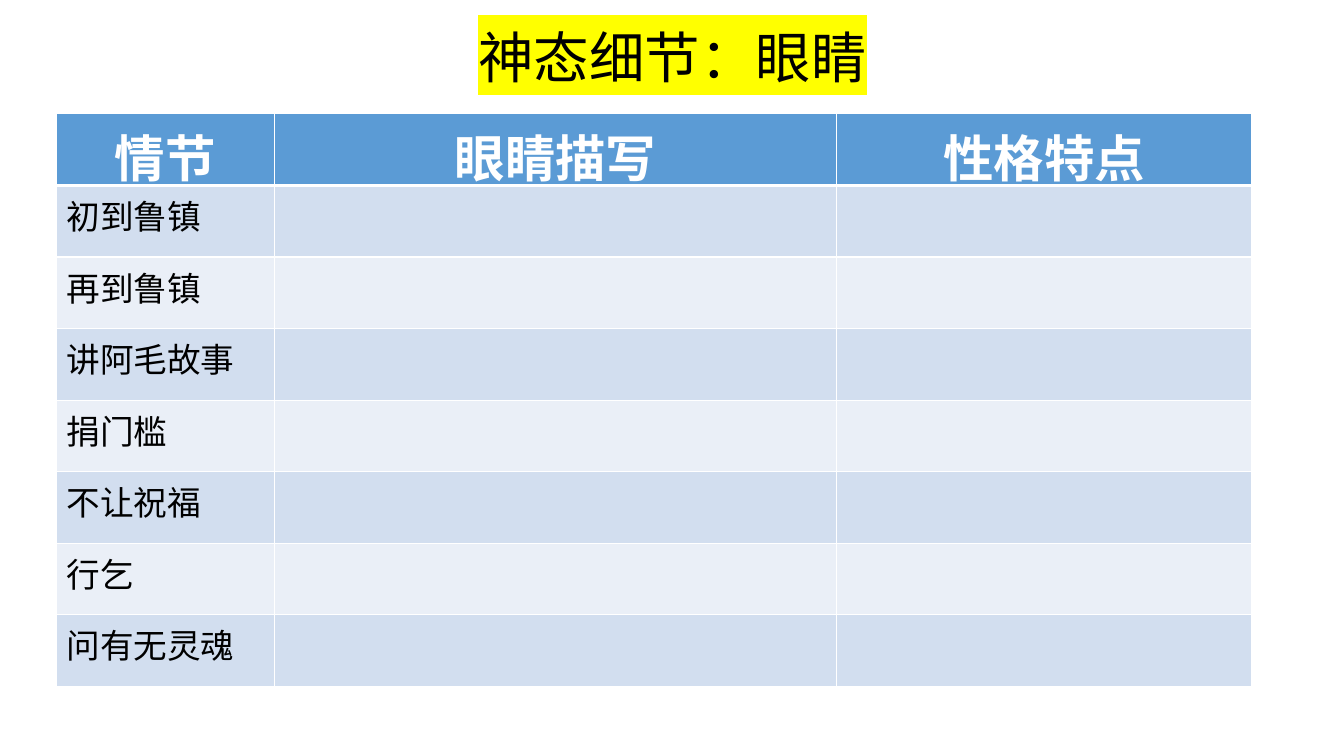
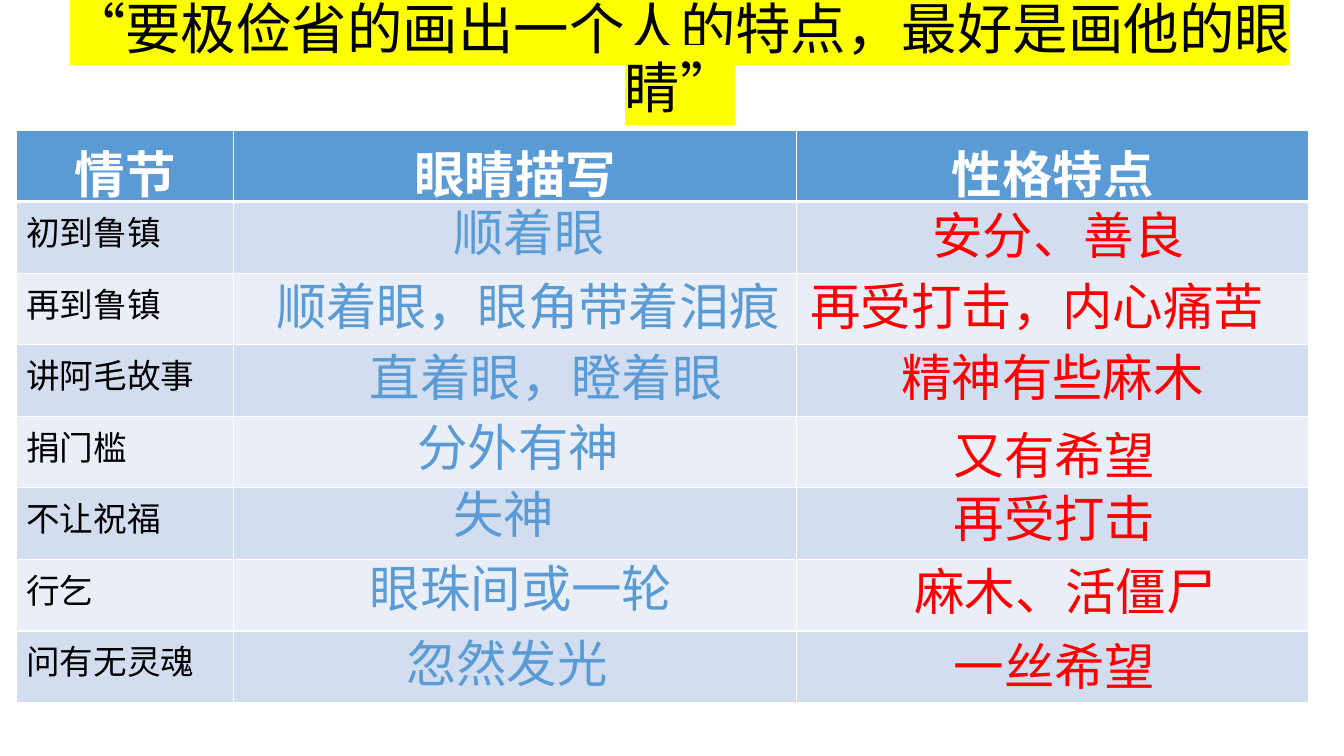
import pptx
import pptx.util
import pptx.dml.color
import pptx.enum.text
import pptx.oxml.ns
import lxml.etree

PX = 9144
FONT = "Calibri"
RGB = pptx.dml.color.RGBColor
BLACK = RGB(0x00, 0x00, 0x00)
WHITE = RGB(0xFF, 0xFF, 0xFF)
YELLOW = RGB(0xFF, 0xFF, 0x00)
BLUE = RGB(0x5B, 0x9B, 0xD5)
RED = RGB(0xFF, 0x00, 0x00)
BANDS = (RGB(0xD2, 0xDE, 0xEF), RGB(0xEA, 0xEF, 0xF7))
ALIGN = pptx.enum.text.PP_ALIGN
ANCHOR = pptx.enum.text.MSO_ANCHOR
QN = pptx.oxml.ns.qn

HEADS = ("情节", "眼睛描写", "性格特点")
SCENES = ("初到鲁镇", "再到鲁镇", "讲阿毛故事", "捐门槛", "不让祝福", "行乞", "问有无灵魂")
ROW = 71

EYES = (
    ("顺着眼", 424, 66, 288),
    ("顺着眼，眼角带着泪痕", 248, 139, 546),
    ("直着眼，瞪着眼", 341, 209, 382),
    ("分外有神", 388, 279, 288),
    ("失神", 424, 345, 288),
    ("眼珠间或一轮", 341, 419, 420),
    ("忽然发光", 377, 493, 288),
)
TRAITS = (
    ("安分、善良", 899, 69, 301),
    ("再受打击，内心痛苦", 778, 139, 505),
    ("精神有些麻木", 868, 209, 363),
    ("又有希望", 920, 287, 363),
    ("再受打击", 920, 349, 363),
    ("麻木、活僵尸", 881, 422, 363),
    ("一丝希望", 920, 496, 363),
)


def write(frame, text, size, color, bold=False, align=ALIGN.LEFT):
    frame.text = text
    line = frame.paragraphs[0]
    line.alignment = align
    run = line.runs[0]
    run.font.size = pptx.util.Pt(size)
    run.font.bold = bold
    run.font.color.rgb = color
    run.font.name = FONT
    run.font._element.set("lang", "zh-CN")
    return line


def add_text(slide, box, *args, **opts):
    shape = slide.shapes.add_textbox(*(n * PX for n in box))
    shape.text_frame.word_wrap = True
    return shape.text_frame, write(shape.text_frame, *args, **opts)


def add_title(slide, box, text):
    frame, line = add_text(slide, box, text, 39.6, BLACK, align=ALIGN.CENTER)
    frame.vertical_anchor = ANCHOR.MIDDLE
    line.line_spacing = 0.9
    mark = lxml.etree.Element(QN("a:highlight"))
    lxml.etree.SubElement(mark, QN("a:srgbClr"), val=str(YELLOW))
    line.runs[0].font._element.find(QN("a:latin")).addprevious(mark)


def paint(cell, color, top, base):
    props = cell._tc.get_or_add_tcPr()
    for side, width in (("L", 1), ("R", 1), ("T", top), ("B", base)):
        edge = lxml.etree.SubElement(props, QN("a:ln" + side), w=str(pptx.util.Pt(width)))
        fill = lxml.etree.SubElement(edge, QN("a:solidFill"))
        lxml.etree.SubElement(fill, QN("a:srgbClr"), val=str(WHITE))
    cell.fill.solid()
    cell.fill.fore_color.rgb = color


def add_grid(slide, left, top, cols):
    count = len(SCENES) + 1
    box = (left, top, sum(cols), count * ROW)
    table = slide.shapes.add_table(count, len(cols), *(n * PX for n in box)).table
    for col, width in zip(table.columns, cols):
        col.width = width * PX
    for row in table.rows:
        row.height = ROW * PX
    for c, head in enumerate(HEADS):
        cell = table.cell(0, c)
        write(cell.text_frame, head, 36, WHITE, True, ALIGN.CENTER)
        paint(cell, BLUE, 1, 3)
    for r, scene in enumerate(SCENES, 1):
        write(table.cell(r, 0).text_frame, scene, 24, BLACK)
        for c in range(len(cols)):
            paint(table.cell(r, c), BANDS[(r - 1) % 2], 3 if r == 1 else 1, 1)


def add_notes(slide, left, top, notes, color):
    for text, x, y, width in notes:
        add_text(slide, (left + x, top + y, width, ROW), text, 36, color)


def add_task(deck):
    slide = deck.slides.add_slide(deck.slide_layouts[6])
    add_title(slide, (92, 25, 1150, 71), "神态细节：眼睛")
    add_grid(slide, 56, 113, (216, 558, 411))


def add_key(deck):
    slide = deck.slides.add_slide(deck.slide_layouts[6])
    add_title(slide, (16, 25, 1317, 71), "“要极俭省的画出一个人的特点，最好是画他的眼睛”")
    left, top = 16, 129
    add_grid(slide, left, top, (216, 558, 508))
    add_notes(slide, left, top, EYES, BLUE)
    add_notes(slide, left, top, TRAITS, RED)


def main():
    deck = pptx.Presentation()
    deck.slide_width = 1333 * PX
    deck.slide_height = 750 * PX
    add_task(deck)
    add_key(deck)
    deck.save("out.pptx")


if __name__ == "__main__":
    main()
